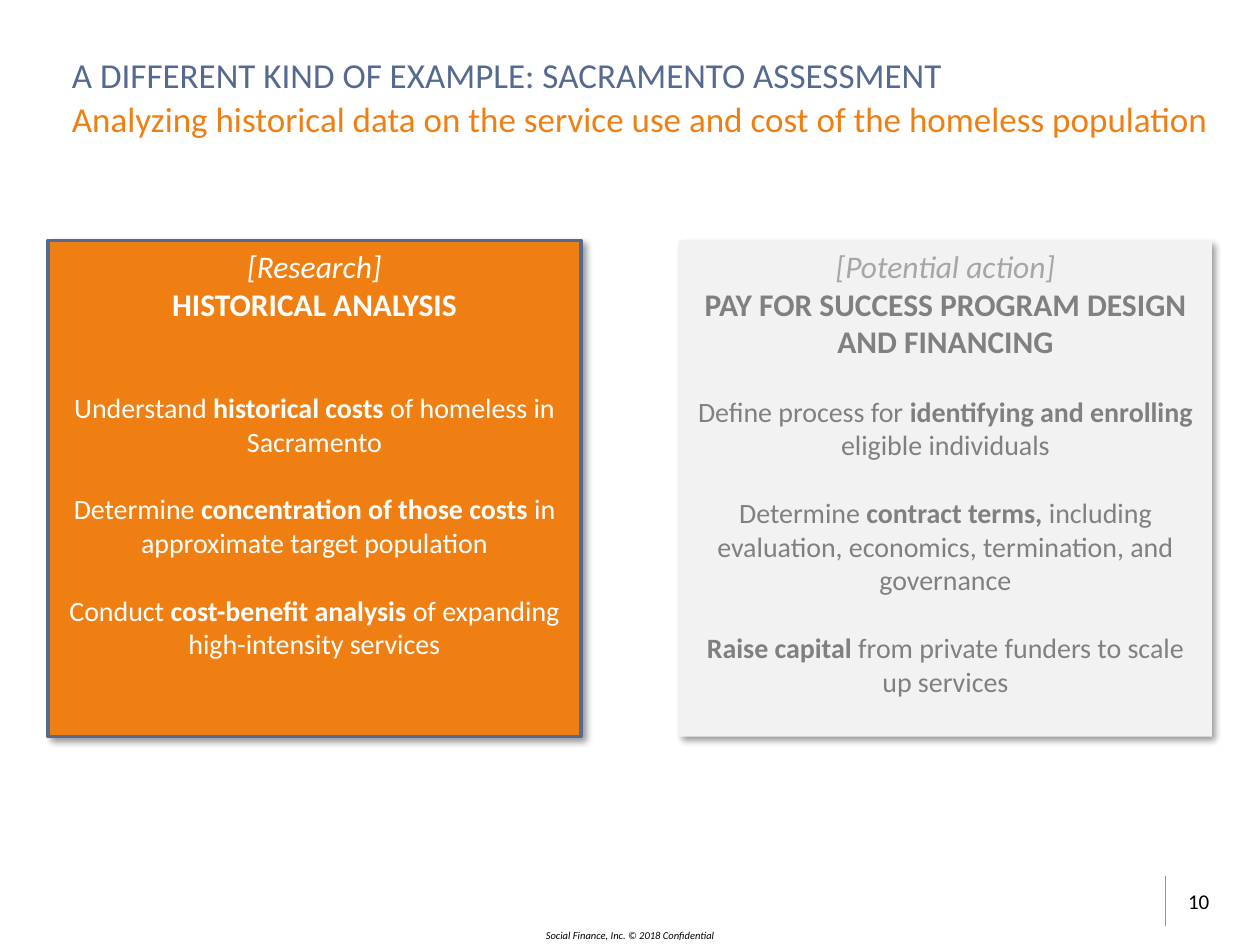
from dataclasses import dataclass

from lxml import etree
from pptx import Presentation
from pptx.dml.color import RGBColor
from pptx.enum.shapes import MSO_CONNECTOR, MSO_SHAPE
from pptx.enum.text import MSO_ANCHOR, PP_ALIGN
from pptx.oxml import parse_xml
from pptx.oxml.ns import nsdecls, qn
from pptx.util import Cm, Pt

LEFT, CENTER = PP_ALIGN.LEFT, PP_ALIGN.CENTER
TOP, MIDDLE = MSO_ANCHOR.TOP, MSO_ANCHOR.MIDDLE
RECT, STRAIGHT = MSO_SHAPE.RECTANGLE, MSO_CONNECTOR.STRAIGHT


@dataclass(frozen=True)
class Theme:
    """Hold the colours, font and type sizes of the slide."""
    font: str = "Calibri"
    blue: str = "556991"
    orange: str = "F07F13"
    white: str = "FFFFFF"
    black: str = "000000"
    pale: str = "F2F2F2"
    silver: str = "A6A6A6"
    gray: str = "808080"
    rule: str = "9B8F8B"
    title: int = 20
    head: int = 18
    body: int = 16
    page: int = 12
    foot: int = 6
    gap: float = 19.5


THEME = Theme()


def paint(color):
    """Turn a hex string into a colour."""
    return RGBColor.from_string(color)


def write(frame, text, size, color, bold=False, italic=False, align=LEFT, gap=0):
    """Add a paragraph, with the parts between asterisks in bold."""
    first = frame.paragraphs[0]
    para = first if not first.runs else frame.add_paragraph()
    para.alignment = align
    para.space_before = Pt(gap)
    for index, part in enumerate(text.split("*")):
        if part:
            run = para.add_run()
            run.text = part
            font = run.font
            font.name, font.size = THEME.font, Pt(size)
            font.bold, font.italic = bold or index % 2 == 1, italic
            font.color.rgb = paint(color)


def label(slide, box, text, size, color, inset=0, anchor=TOP, **style):
    """Add a text box with a single paragraph."""
    frame = slide.shapes.add_textbox(*map(Cm, box)).text_frame
    frame.word_wrap = True
    frame.vertical_anchor = anchor
    frame.margin_left = Cm(inset)
    frame.margin_right = frame.margin_top = frame.margin_bottom = 0
    write(frame, text, size, color, **style)


def shade(shape):
    """Give a shape a soft shadow to the lower right."""
    shape.shadow.inherit = False
    effects = shape._element.spPr.find(qn("a:effectLst"))
    effects.append(parse_xml(
        f'<a:outerShdw {nsdecls("a")} blurRad="{Pt(4)}" dist="{Pt(3)}" '
        f'dir="2700000" algn="tl" rotWithShape="0"><a:srgbClr val="{THEME.black}">'
        '<a:alpha val="40000"/></a:srgbClr></a:outerShdw>'))


def panel(slide, left, fill, edge, tag, name, items, tint, ink, lead):
    """Add a card with a tag, a heading and spaced items."""
    card = slide.shapes.add_shape(RECT, Cm(left), Cm(4.85), Cm(10.74), Cm(10))
    card.fill.solid()
    card.fill.fore_color.rgb = paint(fill)
    if edge:
        card.line.color.rgb = paint(edge)
        card.line.width = Pt(2)
    else:
        card.line.fill.background()
    shade(card)
    frame = card.text_frame
    frame.word_wrap = True
    frame.vertical_anchor = TOP
    write(frame, tag, THEME.head, tint, italic=True, align=CENTER)
    write(frame, name, THEME.head, ink, bold=True, align=CENTER)
    for index, item in enumerate(items):
        gap = THEME.gap if index else lead
        write(frame, item, THEME.body, ink, align=CENTER, gap=gap)


def rule(slide, left, top, bottom):
    """Add a thin upright line."""
    line = slide.shapes.add_connector(
        STRAIGHT, Cm(left), Cm(top), Cm(left), Cm(bottom))
    line.line.color.rgb = paint(THEME.rule)
    line.line.width = Pt(0.75)
    etree.SubElement(line._element.spPr, qn("a:effectLst"))


def main():
    """Build the slide and save it."""
    deck = Presentation()
    deck.slide_width, deck.slide_height = Cm(25.4), Cm(19.05)
    slide = deck.slides.add_slide(deck.slide_layouts[6])
    label(slide, (23.7, 17.65, 1.7, 1.02), "10", THEME.page, THEME.black,
          inset=0.25, anchor=MIDDLE)
    rule(slide, 23.5, 17.65, 18.67)
    label(slide, (10.4, 18.72, 4.6, 0.28),
          "Social Finance, Inc. © 2018 Confidential", THEME.foot, THEME.black,
          italic=True, align=CENTER)
    label(slide, (1.45, 1.04, 22.48, 0.91),
          "A DIFFERENT KIND OF EXAMPLE: SACRAMENTO ASSESSMENT",
          THEME.title, THEME.blue, anchor=MIDDLE)
    panel(slide, 0.97, THEME.orange, THEME.blue, "[Research]",
          "HISTORICAL ANALYSIS",
          ["Understand *historical costs *of homeless in Sacramento",
           "Determine *concentration of those costs *in approximate target population",
           "Conduct *cost-benefit analysis *of expanding high-intensity services"],
          THEME.white, THEME.white, 2 * THEME.gap)
    panel(slide, 13.69, THEME.pale, None, "[Potential action]",
          "PAY FOR SUCCESS PROGRAM DESIGN AND FINANCING",
          ["Define process for *identifying and enrolling *eligible individuals",
           "Determine *contract terms,* including evaluation, economics, "
           "termination, and governance",
           "*Raise capital *from private funders to scale up services"],
          THEME.silver, THEME.gray, THEME.gap)
    label(slide, (1.45, 1.96, 23.01, 0.97),
          "Analyzing historical data on the service use and cost of the "
          "homeless population", THEME.title, THEME.orange)
    deck.save("out.pptx")


if __name__ == "__main__":
    main()
